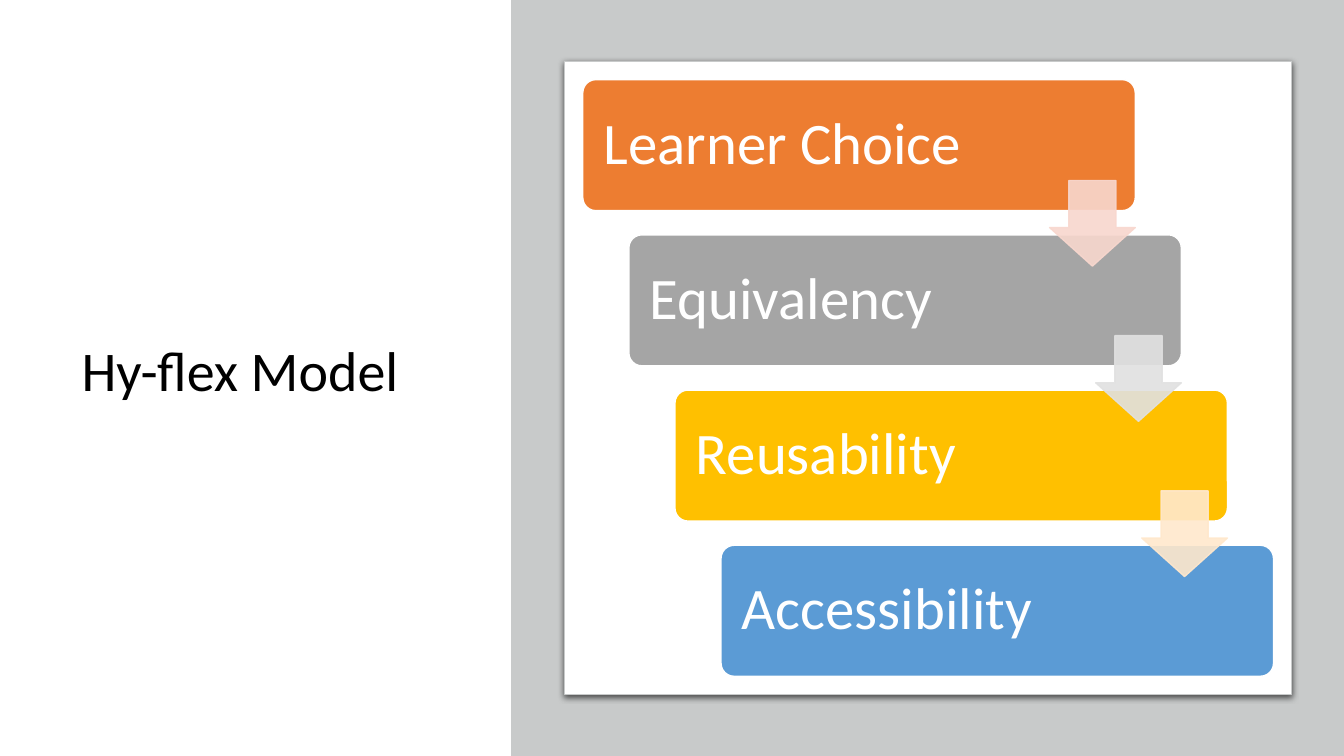
from dataclasses import dataclass

from lxml.etree import SubElement
from pptx import Presentation
from pptx.dml.color import RGBColor
from pptx.enum.shapes import MSO_SHAPE
from pptx.enum.text import MSO_ANCHOR, MSO_AUTO_SIZE, PP_ALIGN
from pptx.oxml.ns import qn
from pptx.util import Inches, Pt


@dataclass(frozen=True)
class Theme:
    font: str = "Calibri"
    title_size: int = 40
    step_size: int = 42
    title: str = "000000"
    panel: str = "C8CACA"
    white: str = "FFFFFF"
    shadow: str = "000000"
    orange: str = "ED7D31"
    gray: str = "A5A5A5"
    gold: str = "FFC000"
    blue: str = "5B9BD5"
    pale_orange: str = "F8D7CE"
    pale_gray: str = "E1E1E1"
    pale_gold: str = "FFE8CC"


THEME = Theme()
STEPS = [
    ("Learner Choice", THEME.orange),
    ("Equivalency", THEME.gray),
    ("Reusability", THEME.gold),
    ("Accessibility", THEME.blue),
]
ARROW_COLORS = [THEME.pale_orange, THEME.pale_gray, THEME.pale_gold]
STEP_LEFT, STEP_TOP = 5.78, 0.79
STEP_WIDTH, STEP_HEIGHT = 5.48, 1.3
STEP_SHIFT, STEP_PITCH = 0.457, 1.54
ARROW_SIZE = 0.85
ARROW_DROP = 1.0


def add_filled_shape(slide, kind, box, fill, line=None, line_width=1, adjustments=()):
    shape = slide.shapes.add_shape(kind, *(Inches(length) for length in box))
    shape.shadow.inherit = False
    shape.fill.solid()
    shape.fill.fore_color.rgb = RGBColor.from_string(fill)
    if line:
        shape.line.color.rgb = RGBColor.from_string(line)
        shape.line.width = Pt(line_width)
    else:
        shape.line.fill.background()
    for index, value in enumerate(adjustments):
        shape.adjustments[index] = value
    return shape


def write_text(shape, text, size, color, inset):
    frame = shape.text_frame
    frame.word_wrap = True
    frame.auto_size = MSO_AUTO_SIZE.NONE
    frame.vertical_anchor = MSO_ANCHOR.MIDDLE
    frame.margin_left = frame.margin_right = Inches(inset)
    frame.margin_top = frame.margin_bottom = Inches(0.05)
    paragraph = frame.paragraphs[0]
    paragraph.alignment = PP_ALIGN.LEFT
    paragraph.line_spacing = 0.9
    run = paragraph.add_run()
    run.text = text
    run.font.name = THEME.font
    run.font.size = Pt(size)
    run.font.color.rgb = RGBColor.from_string(color)


def add_drop_shadow(shape):
    effects = shape._element.spPr.find(qn("a:effectLst"))
    shadow = SubElement(
        effects,
        qn("a:outerShdw"),
        blurRad=str(Pt(4.5)),
        dist=str(Pt(1.5)),
        dir="5400000",
        algn="ctr",
        rotWithShape="0",
    )
    color = SubElement(shadow, qn("a:srgbClr"), val=THEME.shadow)
    SubElement(color, qn("a:alpha"), val="63000")


def make_translucent(shape, percent):
    for color in shape._element.spPr.iter(qn("a:srgbClr")):
        SubElement(color, qn("a:alpha"), val=str(percent * 1000))


def set_title(slide, text):
    title = slide.shapes.title
    title.left, title.top = Inches(0.71), Inches(0.69)
    title.width, title.height = Inches(4.01), Inches(6.02)
    write_text(title, text, THEME.title_size, THEME.title, 0.1)


def add_panel(slide):
    add_filled_shape(slide, MSO_SHAPE.RECTANGLE, (5.07, 0, 8.26, 7.5), THEME.panel)
    card = add_filled_shape(
        slide, MSO_SHAPE.RECTANGLE, (5.6, 0.61, 7.21, 6.28),
        THEME.white, THEME.panel, 0.75,
    )
    add_drop_shadow(card)


def add_step(slide, index, text, color):
    box = (
        STEP_LEFT + index * STEP_SHIFT,
        STEP_TOP + index * STEP_PITCH,
        STEP_WIDTH,
        STEP_HEIGHT,
    )
    step = add_filled_shape(
        slide, MSO_SHAPE.ROUNDED_RECTANGLE, box, color, THEME.white, adjustments=(0.1,)
    )
    write_text(step, text, THEME.step_size, THEME.white, 0.17)


def add_step_arrow(slide, index, color):
    box = (
        STEP_LEFT + STEP_WIDTH - ARROW_SIZE + index * STEP_SHIFT,
        STEP_TOP + ARROW_DROP + index * STEP_PITCH,
        ARROW_SIZE,
        ARROW_SIZE,
    )
    arrow = add_filled_shape(
        slide, MSO_SHAPE.DOWN_ARROW, box, color, color, adjustments=(0.55, 0.45)
    )
    make_translucent(arrow, 90)


def main():
    presentation = Presentation()
    presentation.slide_width = Inches(13.33)
    presentation.slide_height = Inches(7.5)
    slide = presentation.slides.add_slide(presentation.slide_layouts[5])
    set_title(slide, "Hy-flex Model")
    add_panel(slide)
    for index, (text, color) in enumerate(STEPS):
        add_step(slide, index, text, color)
    for index, color in enumerate(ARROW_COLORS):
        add_step_arrow(slide, index, color)
    presentation.save("out.pptx")


if __name__ == "__main__":
    main()
